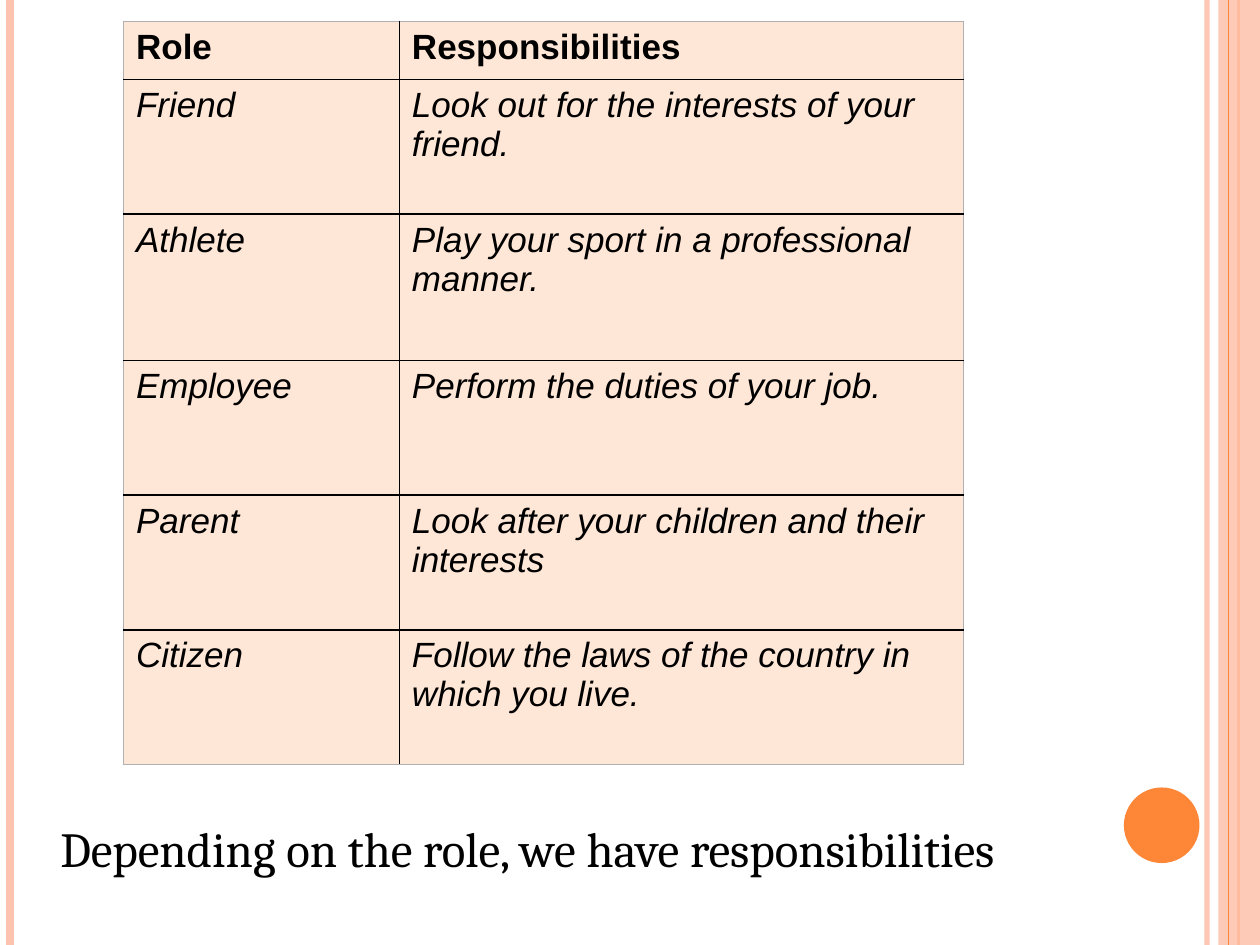
from lxml import etree
from pptx import Presentation
from pptx import util as u
from pptx.dml import color
from pptx.enum import shapes, text
from pptx.oxml import ns

PEACH, ORANGE, CREAM, BLACK, GREY = "FEC3AE", "FE8637", "FFE7D7", "000000", "B0B0B0"
ROWS = [
    ("Role", "Responsibilities"),
    ("Friend", "Look out for the interests of your friend."),
    ("Athlete", "Play your sport in a professional manner."),
    ("Employee", "Perform the duties of your job."),
    ("Parent", "Look after your children and their interests"),
    ("Citizen", "Follow the laws of the country in which you live."),
]
COLUMN_WIDTHS = [2.19, 4.48]
ROW_HEIGHTS = [0.46, 1.07, 1.16, 1.07, 1.07, 1.07]


def rgb(value):
    return color.RGBColor.from_string(value)


def paint(fill, value, opacity=100):
    fill.solid()
    fill.fore_color.rgb = rgb(value)
    if opacity < 100:
        tint = fill._xPr.find(".//" + ns.qn("a:srgbClr"))
        etree.SubElement(tint, ns.qn("a:alpha"), val=str(opacity * 1000))


def add_stripe(slide, x, value, width, opacity=100):
    left = u.Inches(x)
    stripe = slide.shapes.add_connector(
        shapes.MSO_CONNECTOR.STRAIGHT, left, 0, left, u.Inches(7.5))
    stripe.line.width = u.Pt(width)
    paint(stripe.line.fill, value, opacity)
    etree.SubElement(stripe._element.spPr, ns.qn("a:effectLst"))


def add_block(slide, kind, box, value, opacity=100):
    shape = slide.shapes.add_shape(kind, *map(u.Inches, box))
    shape.shadow.inherit = False
    paint(shape.fill, value, opacity)
    shape.line.fill.background()


def write(frame, words, **formats):
    run = frame.paragraphs[0].add_run()
    run.text = words
    run.font.color.rgb = rgb(BLACK)
    for name, value in formats.items():
        setattr(run.font, name, value)


def set_borders(cell, outer_sides):
    properties = cell._tc.get_or_add_tcPr()
    for index, side in enumerate("LRTB"):
        outer = side in outer_sides
        line = etree.Element(ns.qn(f"a:ln{side}"), w=str(u.Pt(0.75 if outer else 1)))
        fill = etree.SubElement(line, ns.qn("a:solidFill"))
        etree.SubElement(fill, ns.qn("a:srgbClr"), val=GREY if outer else BLACK)
        properties.insert(index, line)


def add_role_table(slide):
    box = 0.98, 0.17, sum(COLUMN_WIDTHS), sum(ROW_HEIGHTS)
    table = slide.shapes.add_table(
        len(ROWS), len(COLUMN_WIDTHS), *map(u.Inches, box)).table
    for column, width in zip(table.columns, COLUMN_WIDTHS):
        column.width = u.Inches(width)
    for i, (row, height) in enumerate(zip(ROWS, ROW_HEIGHTS)):
        table.rows[i].height = u.Inches(height)
        for j, words in enumerate(row):
            cell = table.cell(i, j)
            paint(cell.fill, CREAM)
            outer_sides = "LR"[j]
            if i == 0:
                outer_sides += "T"
            if i == len(ROWS) - 1:
                outer_sides += "B"
            set_borders(cell, outer_sides)
            write(cell.text_frame, words, name="Arial", size=u.Pt(20),
                  bold=i == 0, italic=i > 0)


def add_caption(slide, box, words):
    frame = slide.shapes.add_textbox(*map(u.Inches, box)).text_frame
    frame.word_wrap = True
    frame.auto_size = text.MSO_AUTO_SIZE.SHAPE_TO_FIT_TEXT
    write(frame, words, name="Cambria", size=u.Pt(28))


def main():
    presentation = Presentation()
    presentation.slide_width = u.Inches(10)
    presentation.slide_height = u.Inches(7.5)
    slide = presentation.slides.add_slide(presentation.slide_layouts[6])
    add_stripe(slide, 9.58, PEACH, 3, 93)
    add_stripe(slide, 0.08, PEACH, 4.5)
    add_stripe(slide, 9.83, ORANGE, 1.5)
    add_block(slide, shapes.MSO_SHAPE.RECTANGLE, (9.67, 0, 0.33, 7.5), PEACH, 87)
    add_stripe(slide, 9.75, ORANGE, 0.75)
    add_block(slide, shapes.MSO_SHAPE.OVAL, (8.92, 6.25, 0.6, 0.6), ORANGE)
    add_role_table(slide)
    add_caption(slide, (0.38, 6.45, 8.68, 0.57),
                "Depending on the role, we have responsibilities")
    presentation.save("out.pptx")


if __name__ == "__main__":
    main()
